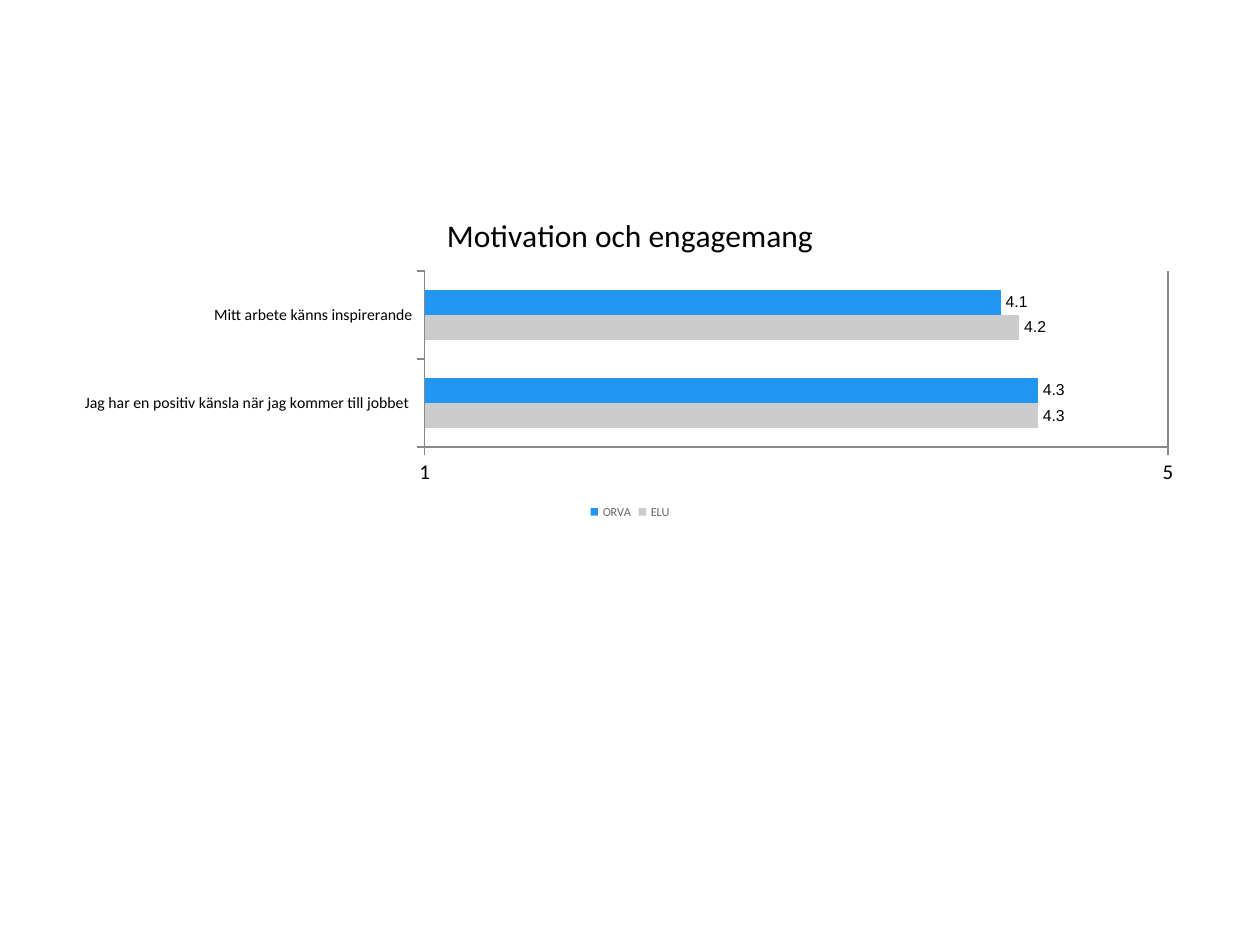
import pptx
import pptx.chart.data
import pptx.dml.color
import pptx.enum.chart
import pptx.oxml
import pptx.oxml.ns
import pptx.util
from pptx.util import Inches

# Content
TITLE = "Motivation och engagemang"
STATEMENTS = ["Jag har en positiv känsla när jag kommer till jobbet ",
              "Mitt arbete känns inspirerande"]
GROUPS = [("ELU", (4.3, 4.2), "CCCCCC"),
          ("ORVA", (4.3, 4.1), "2196F3")]
SCALE_MIN, SCALE_MAX = 1, 5
BLACK, LINE_GREY, LEGEND_GREY = "000000", "888888", "666666"

# Plot area in inches from the chart's top left corner
CHART_WIDTH, CHART_HEIGHT = 9, 2.62
PLOT_AREA = {"x": 2.87 / CHART_WIDTH, "y": 0.61 / CHART_HEIGHT,
             "w": 5.9 / CHART_WIDTH, "h": 1.4 / CHART_HEIGHT}


def rgb(color):
    return pptx.dml.color.RGBColor.from_string(color)


def set_font(font, size, color=BLACK, name="Calibri"):
    font.size = pptx.util.Pt(size)
    font.name = name
    font.bold = False
    font.color.rgb = rgb(color)


def set_line(line):
    line.color.rgb = rgb(LINE_GREY)
    line.width = pptx.util.Pt(1)


def place_plot(chart, area):
    modes = "".join(f'<c:{key}Mode val="edge"/>' for key in "xy")
    values = "".join(f'<c:{key} val="{value:.4f}"/>' for key, value in area.items())
    layout = pptx.oxml.parse_xml(
        f'<c:layout {pptx.oxml.ns.nsdecls("c")}><c:manualLayout>'
        f'<c:layoutTarget val="inner"/>{modes}{values}'
        '</c:manualLayout></c:layout>')
    plot_area = chart.element.find(".//" + pptx.oxml.ns.qn("c:plotArea"))
    for old in plot_area.findall(pptx.oxml.ns.qn("c:layout")):
        plot_area.remove(old)
    plot_area.insert(0, layout)


deck = pptx.Presentation()
deck.slide_width, deck.slide_height = Inches(10), Inches(7.5)
slide = deck.slides.add_slide(deck.slide_layouts[6])

# Chart
survey = pptx.chart.data.CategoryChartData()
survey.categories = STATEMENTS
for group, scores, _ in GROUPS:
    survey.add_series(group, scores)
chart = slide.shapes.add_chart(
    pptx.enum.chart.XL_CHART_TYPE.BAR_CLUSTERED, Inches(0.5), Inches(1.54),
    Inches(CHART_WIDTH), Inches(CHART_HEIGHT), survey).chart
set_font(chart.font, 10)
place_plot(chart, PLOT_AREA)

# Title and legend
chart.has_title = True
heading = chart.chart_title.text_frame
heading.text = TITLE
set_font(heading.paragraphs[0].runs[0].font, 18)
chart.chart_title.include_in_layout = False
chart.has_legend = True
chart.legend.position = pptx.enum.chart.XL_LEGEND_POSITION.BOTTOM
chart.legend.include_in_layout = False
set_font(chart.legend.font, 7, LEGEND_GREY)

# Axes
statement_axis, score_axis = chart.category_axis, chart.value_axis
for axis, size in ((statement_axis, 9), (score_axis, 12)):
    set_font(axis.tick_labels.font, size)
    set_line(axis.format.line)
    axis.major_tick_mark = pptx.enum.chart.XL_TICK_MARK.OUTSIDE
    axis.minor_tick_mark = pptx.enum.chart.XL_TICK_MARK.NONE
score_axis.minimum_scale = SCALE_MIN
score_axis.maximum_scale = SCALE_MAX
score_axis.major_unit = SCALE_MAX - SCALE_MIN
score_axis.has_major_gridlines = True
set_line(score_axis.major_gridlines.format.line)

# Bars and score labels
plot = chart.plots[0]
plot.gap_width = 150
plot.vary_by_categories = False
for bars, (_, _, color) in zip(plot.series, GROUPS):
    bars.format.fill.solid()
    bars.format.fill.fore_color.rgb = rgb(color)
    labels = bars.data_labels
    labels.show_value = True
    labels.number_format = "##.0"
    labels.number_format_is_linked = False
    labels.position = pptx.enum.chart.XL_LABEL_POSITION.OUTSIDE_END
    set_font(labels.font, 9, name="Arial")

deck.save("out.pptx")
